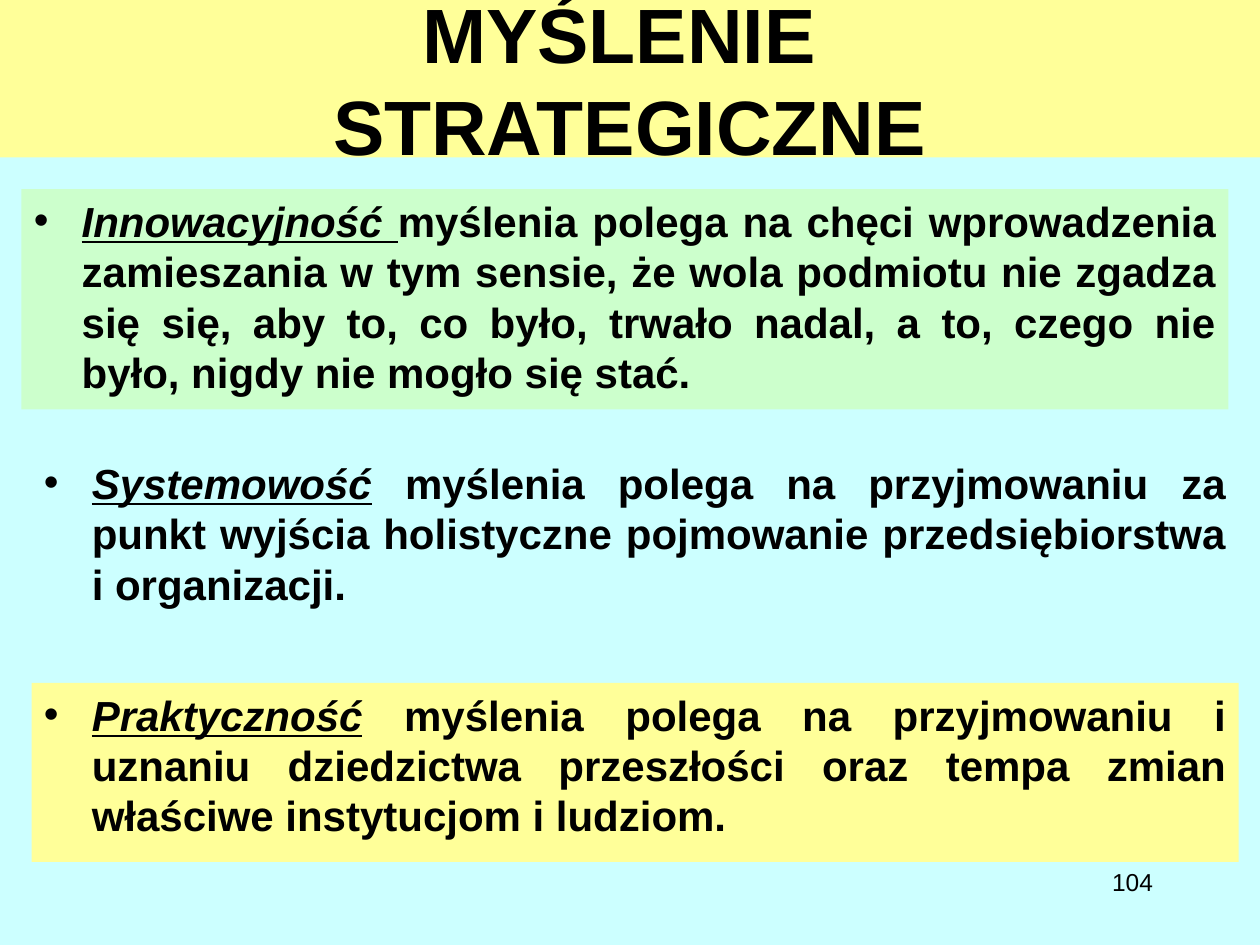
from pptx import Presentation
from pptx import util as u
from pptx.dml.color import RGBColor
from pptx.enum import shapes, text
from pptx.oxml.ns import qn
from lxml import etree

Inches, Pt = u.Inches, u.Pt

COLORS = {
    "background": "CCFFFF",
    "yellow": "FFFF99",
    "green": "CCFFCC",
    "ink": "000000",
}

# Term, explanation, fill, box (left, top, width, height in inches)
TRAITS = [
    ("Innowacyjność ",
     "myślenia polega na chęci wprowadzenia zamieszania w tym sensie, "
     "że wola podmiotu nie zgadza się się, aby to, co było, trwało nadal, "
     "a to, czego nie było, nigdy nie mogło się stać.",
     "green", (0.17, 1.5, 9.58, 1.75)),
    ("Systemowość",
     " myślenia polega na przyjmowaniu za punkt wyjścia holistyczne "
     "pojmowanie przedsiębiorstwa i organizacji.",
     "background", (0.25, 3.58, 9.58, 1.5)),
    ("Praktyczność",
     " myślenia polega na przyjmowaniu i uznaniu dziedzictwa przeszłości "
     "oraz tempa zmian właściwe instytucjom i ludziom.",
     "yellow", (0.25, 5.42, 9.58, 1.42)),
]


def paint(fill, color):
    fill.solid()
    fill.fore_color.rgb = RGBColor.from_string(COLORS[color])


def set_font(font, size, bold=False):
    font.name = "Arial"
    font.size = Pt(size)
    font.bold = bold
    font.color.rgb = RGBColor.from_string(COLORS["ink"])


def set_frame(frame, anchor):
    frame.word_wrap = True
    frame.auto_size = text.MSO_AUTO_SIZE.NONE
    frame.vertical_anchor = anchor


def add_bullet(paragraph, indent):
    props = paragraph._p.get_or_add_pPr()
    props.set("marL", str(indent))
    props.set("indent", str(-indent))
    etree.SubElement(props, qn("a:buFont")).set("typeface", "Arial")
    etree.SubElement(props, qn("a:buChar")).set("char", "•")


def place_title(slide, box):
    title = slide.shapes.title
    title.left, title.top, title.width, title.height = map(Inches, box)
    paint(title.fill, "yellow")
    set_frame(title.text_frame, text.MSO_ANCHOR.MIDDLE)
    heading = title.text_frame.paragraphs[0]
    heading.add_run().text = "MYŚLENIE "
    heading.add_line_break()
    heading.add_run().text = "STRATEGICZNE"
    heading.alignment = text.PP_ALIGN.CENTER
    set_font(heading.font, 44, bold=True)


def add_trait(slide, term, explanation, color, box):
    panel = slide.shapes.add_shape(shapes.MSO_SHAPE.RECTANGLE, *map(Inches, box))
    panel.shadow.inherit = False
    paint(panel.fill, color)
    panel.line.fill.background()
    set_frame(panel.text_frame, text.MSO_ANCHOR.TOP)

    definition = panel.text_frame.paragraphs[0]
    definition.alignment = text.PP_ALIGN.JUSTIFY
    definition.space_before = Pt(4.8)
    add_bullet(definition, Inches(0.38))
    set_font(definition.font, 24, bold=True)
    term_run = definition.add_run()
    term_run.text = term
    term_run.font.italic = True
    term_run.font.underline = True
    definition.add_run().text = explanation


def add_page_number(slide, number, box):
    frame = slide.shapes.add_textbox(*map(Inches, box)).text_frame
    set_frame(frame, text.MSO_ANCHOR.TOP)
    page = frame.paragraphs[0]
    page.text = number
    page.alignment = text.PP_ALIGN.RIGHT
    set_font(page.font, 14)


def main():
    prs = Presentation()
    prs.slide_width, prs.slide_height = Inches(10), Inches(7.5)
    slide = prs.slides.add_slide(prs.slide_layouts[5])
    paint(slide.background.fill, "background")

    # Title band
    place_title(slide, (0, 0, 10, 1.25))
    # Three traits of strategic thinking
    for trait in TRAITS:
        add_trait(slide, *trait)
    # Page number
    add_page_number(slide, "104", (7.17, 6.83, 2.08, 0.5))

    prs.save("out.pptx")


if __name__ == "__main__":
    main()
